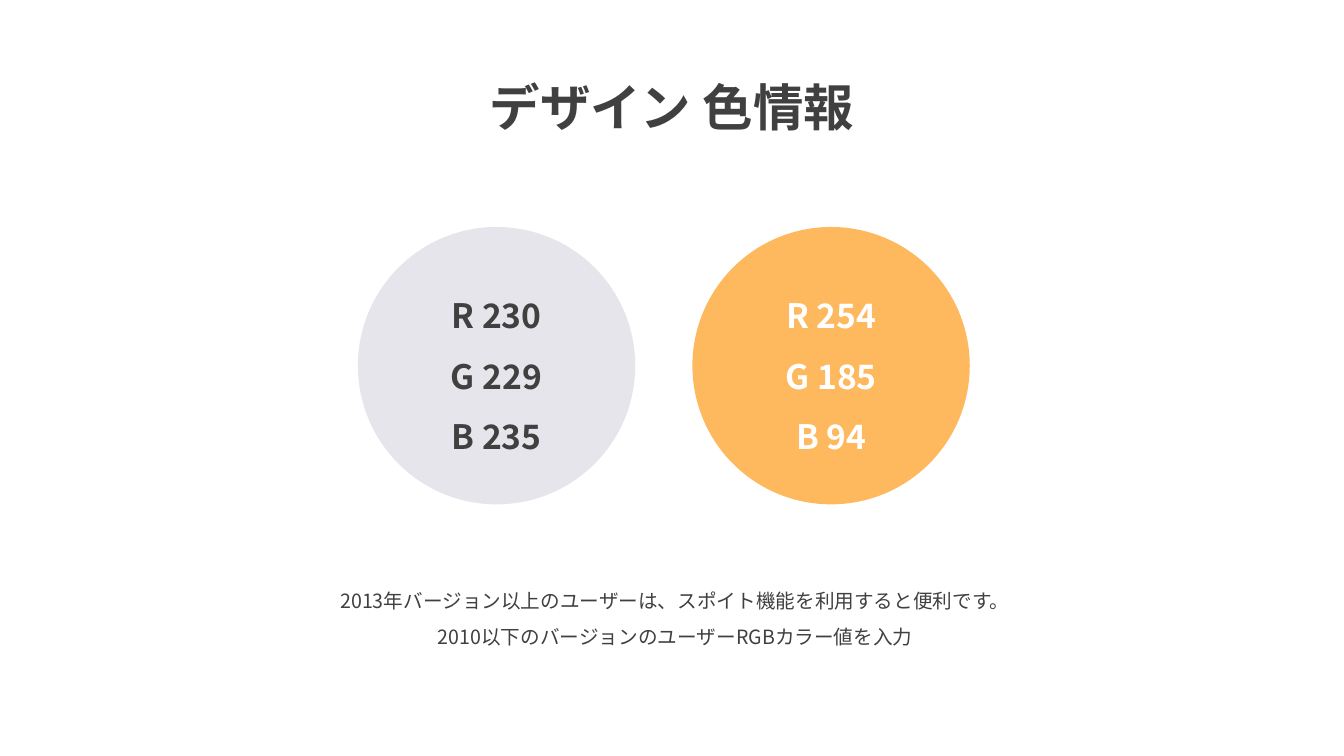
from lxml.etree import SubElement
from pptx import Presentation
from pptx.dml.color import RGBColor
from pptx.enum.shapes import MSO_SHAPE
from pptx.enum.text import MSO_ANCHOR, MSO_AUTO_SIZE, PP_ALIGN
from pptx.oxml.ns import qn
from pptx.util import Cm, Pt

FONT = "Noto Sans CJK KR"
COLORS = {"dark": "404040", "white": "FFFFFF", "grey": "E6E5EB", "orange": "FEB95E"}
SWATCHES = [("grey", "dark"), ("orange", "white")]
SWATCH_LEFT, SWATCH_TOP, SWATCH_SIZE, SWATCH_PITCH = 9.02, 5.72, 6.99, 8.43


def color(name):
    """Return the named palette colour."""
    return RGBColor.from_string(COLORS[name])


def write_lines(frame, lines, size, color_name, bold=False):
    """Fill a text frame with centred lines in one style."""
    frame.word_wrap = True
    frame.text = "\n".join(lines)
    for para in frame.paragraphs:
        para.alignment = PP_ALIGN.CENTER
        para.line_spacing = 1.5
        font = para.font
        font.size = Pt(size)
        font.bold = bold
        font.color.rgb = color(color_name)
        font.name = FONT
        properties = para._p.pPr.find(qn("a:defRPr"))
        SubElement(properties, qn("a:ea"), typeface=FONT)


def add_text(page, left, top, width, height, lines, size, bold=False):
    """Add a dark text box that grows with its lines."""
    box = page.shapes.add_textbox(Cm(left), Cm(top), Cm(width), Cm(height))
    write_lines(box.text_frame, lines, size, "dark", bold)
    box.text_frame.auto_size = MSO_AUTO_SIZE.SHAPE_TO_FIT_TEXT


def add_swatch(page, left, fill_name, text_name):
    """Add a colour circle labelled with its RGB values."""
    circle = page.shapes.add_shape(
        MSO_SHAPE.OVAL, Cm(left), Cm(SWATCH_TOP), Cm(SWATCH_SIZE), Cm(SWATCH_SIZE)
    )
    circle.shadow.inherit = False
    circle.fill.solid()
    circle.fill.fore_color.rgb = color(fill_name)
    circle.line.fill.background()
    circle.text_frame.vertical_anchor = MSO_ANCHOR.MIDDLE
    lines = [f"{channel} {value}" for channel, value in zip("RGB", color(fill_name))]
    write_lines(circle.text_frame, lines, 24, text_name, bold=True)


def main():
    """Build the colour information slide."""
    deck = Presentation()
    deck.slide_width, deck.slide_height = Cm(33.87), Cm(19.05)
    page = deck.slides.add_slide(deck.slide_layouts[6])
    add_text(page, 10.77, 1.02, 12.32, 2.31, ["デザイン 色情報"], 36, bold=True)
    for index, (fill_name, text_name) in enumerate(SWATCHES):
        add_swatch(page, SWATCH_LEFT + index * SWATCH_PITCH, fill_name, text_name)
    notice = [
        "2013年バージョン以上のユーザーは、スポイト機能を利用すると便利です。",
        "2010以下のバージョンのユーザーRGBカラー値を入力",
    ]
    add_text(page, 6.4, 14.43, 21.23, 1.96, notice, 14)
    deck.save("out.pptx")


if __name__ == "__main__":
    main()
